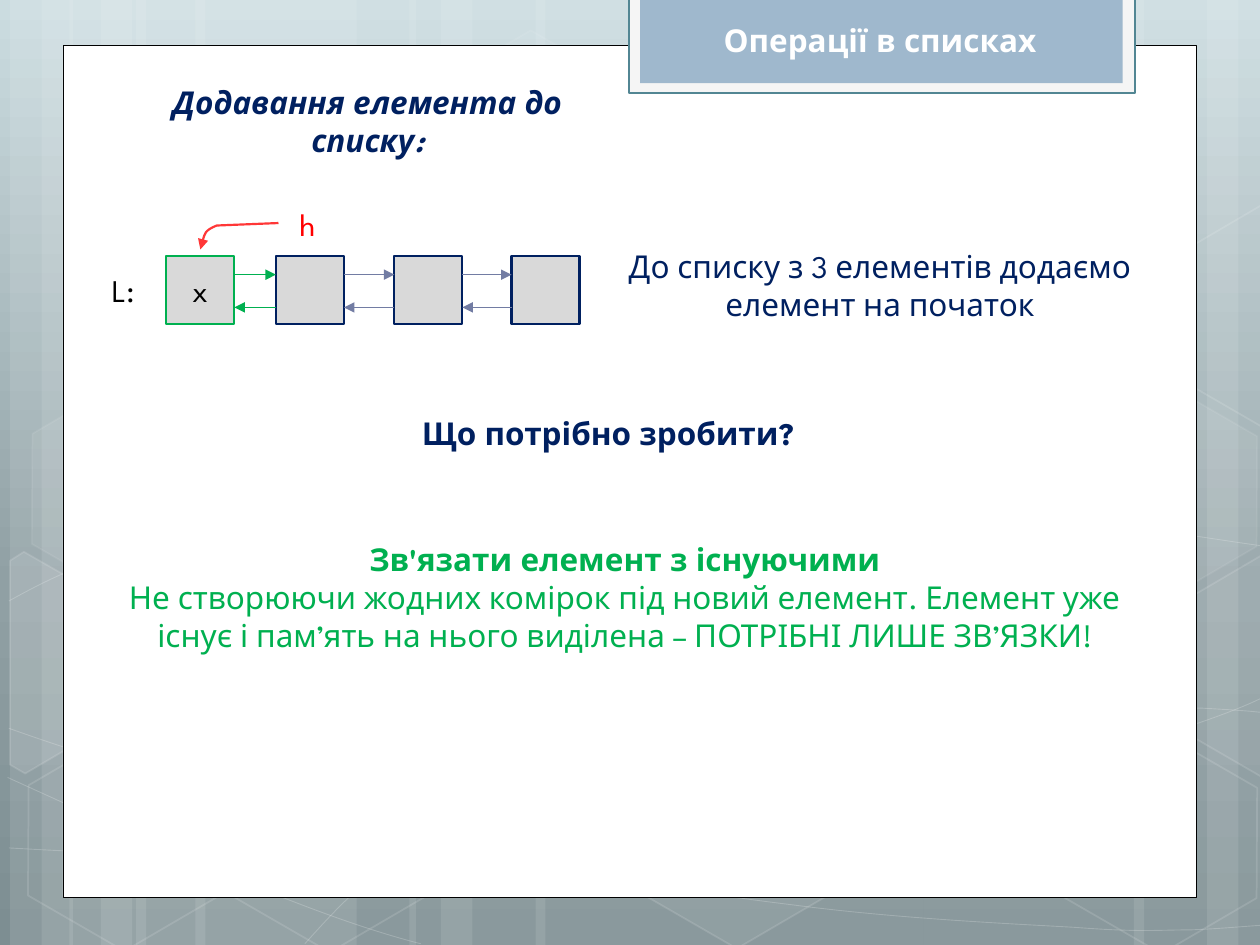
import copy
from lxml import etree
from pptx import Presentation, util as u
from pptx.dml.color import RGBColor
from pptx.enum import shapes, text
from pptx.oxml import parse_xml
from pptx.oxml.ns import nsdecls, qn

FONT = "League Spartan"
WHITE, BLACK = RGBColor(255, 255, 255), RGBColor(0, 0, 0)
NAVY, GREEN = RGBColor(0x00, 0x20, 0x60), RGBColor(0x00, 0xB0, 0x50)
RED, HEAD_RED = RGBColor(0xFF, 0, 0), RGBColor(0xFF, 0x37, 0x37)
GRAY, LINK = RGBColor(0xD9, 0xD9, 0xD9), RGBColor(0x72, 0x7C, 0xA3)
TAB_RIM, TAB_EDGE, TAB = (RGBColor(0xF5, 0xF5, 0xF5), RGBColor(0x52, 0x86, 0x93),
                          RGBColor(0x9F, 0xB8, 0xCD))
SKY = [(0, RGBColor(0xCB, 0xDC, 0xE0)), (0.62, RGBColor(0x90, 0xA0, 0xA4)),
       (1, RGBColor(0x7D, 0x8E, 0x92))]

# Backdrop: stripes are (left, width), hexagons (left, top, fill %, line %)
STRIPES = [(1.08, 1.75), (0.08, 0.5), (0.33, 0.83), (1.55, 1.75), (0.55, 0.5), (0.8, 0.83),
           (7.33, 1.75), (9.58, 0.5), (9, 0.83), (4.25, 3.08), (3.25, 0.5), (3.5, 0.83)]
HEXAGONS = [(3.34, 0.36, 4, 8), (4.97, 5.89, 6, 12), (0.11, 5.91, 0, 12),
            (0.14, 3.12, 7, 8), (1.74, 5.92, 0, 12), (7.53, 4.53, 10, 12),
            (8.34, 5.93, 0, 12), (8.34, 3.14, 7, 8)]
# Paths: a start point, then lines (x, y) or cubic curves (six numbers)
WAVES = [
    [(0.07, 6.73), (0.61, 6.76, 1.15, 6.79, 1.9, 6.78), (2.65, 6.77, 3.58, 6.75, 4.58, 6.65),
     (5.58, 6.55, 7, 6.36, 7.92, 6.17), (8.83, 5.98, 9.77, 5.68, 10.07, 5.51)],
    [(0.07, 4.77), (0.36, 4.61, 0.65, 4.46, 1.21, 4.31), (1.78, 4.16, 2.59, 3.94, 3.47, 3.87),
     (4.36, 3.8, 5.44, 3.79, 6.54, 3.87), (7.64, 3.95, 9.47, 4.26, 10.07, 4.34)],
    [(0.06, 6.17), (1.27, 6.72, 2.47, 7.27, 3.34, 7.49)],
    [(0.07, 5.78), (0.38, 5.89, 0.7, 6, 1.28, 6.16), (1.86, 6.31, 2.73, 6.56, 3.57, 6.73),
     (4.4, 6.9, 5.45, 7.08, 6.28, 7.18), (7.11, 7.29, 8, 7.33, 8.53, 7.36),
     (9.05, 7.4, 9.19, 7.38, 9.45, 7.38), (9.71, 7.37, 9.89, 7.35, 10.07, 7.34)],
    [(2.42, 7.49), (2.6, 7.29, 2.78, 7.09, 3.02, 6.91), (3.26, 6.73, 3.6, 6.53, 3.88, 6.39),
     (4.16, 6.25, 4.33, 6.19, 4.7, 6.09), (5.06, 5.99, 5.73, 5.85, 6.08, 5.78),
     (6.44, 5.71, 6.49, 5.71, 6.8, 5.69), (7.11, 5.66, 7.6, 5.63, 7.94, 5.62),
     (8.29, 5.61, 8.86, 5.62, 8.86, 5.62), (9.53, 5.62),
     (9.71, 5.63, 9.88, 5.64, 9.97, 5.65), (10.06, 5.66, 10.03, 5.65, 10.06, 5.66)],
]
CUT_HEXAGONS = [
    ([(0.08, 4.45), (0.19, 4.38), (0.96, 4.82), (0.95, 5.7), (0.2, 6.14), (0.08, 6.07)], 10),
    ([(9.26, 4.85), (10.01, 4.41), (10.09, 4.46), (10.09, 6.13), (10.02, 6.17),
      (9.26, 5.73)], 4),
    ([(9.26, 2.07), (10.01, 1.63), (10.1, 1.68), (10.09, 3.35), (10.02, 3.39),
      (9.26, 2.95)], 0),
]

# List diagram: cells are (left, edge colour, label)
CELLS = [(1.32, GREEN, "x"), (2.19, NAVY, ""), (3.13, NAVY, ""), (4.06, NAVY, "")]
CELL, CELL_TOP, NEXT_Y, PREV_Y = 0.54, 2.03, 2.18, 2.44
HEAD_POINTER = [(2.21, 1.77), (1.72, 1.79), (1.62, 1.83, 1.61, 1.9, 1.59, 1.98)]

# Texts: box, colour, wrap, alignment, [(paragraph, bold, italic)]
CENTER, LEFT = text.PP_ALIGN.CENTER, text.PP_ALIGN.LEFT
TEXTS = [
    ((5.64, 0.12, 2.69, 0.4), WHITE, False, CENTER, [("Операції в списках", True, False)]),
    ((0.79, 2.1, 0.39, 0.4), BLACK, False, LEFT, [("L:", False, False)]),
    ((1.19, 0.61, 3.45, 0.71), NAVY, True, CENTER,
     [("Додавання елемента до списку:", True, True)]),
    ((4.82, 1.91, 4.33, 0.71), NAVY, True, CENTER,
     [("До списку з 3 елементів додаємо елемент на початок", False, False)]),
    ((2.23, 1.58, 0.42, 0.4), RED, True, CENTER, [("h", False, False)]),
    ((2.66, 3.24, 4.33, 0.4), NAVY, True, CENTER, [("Що потрібно зробити?", True, False)]),
    ((0.67, 4.24, 8.58, 1.01), GREEN, True, CENTER,
     [("Зв'язати елемент з існуючими", True, False),
      ("Не створюючи жодних комірок під новий елемент. Елемент уже існує і пам’ять "
       "на нього виділена – ПОТРІБНІ ЛИШЕ ЗВ’ЯЗКИ!", False, False)]),
]

prs = Presentation()
prs.slide_width, prs.slide_height = u.Inches(10), u.Inches(7.5)
slide = prs.slides.add_slide(prs.slide_layouts[6])


def paint(fill, color, opacity=100):
    if color is None or not opacity:
        fill.background()
        return
    fill.solid()
    fill.fore_color.rgb = color


def fade(shape, tag, opacity):
    """Set the opacity of the shape's fill (p:spPr) or line (a:ln)."""
    color = shape.element.find(f".//{qn(tag)}/{qn('a:solidFill')}/{qn('a:srgbClr')}")
    if color is not None and opacity < 100:
        color.append(parse_xml(f'<a:alpha {nsdecls("a")} val="{opacity * 1000}"/>'))


def style(shape, fill=None, edge=None, width=1, fill_opacity=100, edge_opacity=100):
    shape.shadow.inherit = False
    paint(shape.fill, fill, fill_opacity)
    paint(shape.line.fill, edge)
    if edge is not None:
        shape.line.width = u.Pt(width)
    fade(shape, "p:spPr", fill_opacity)
    fade(shape, "a:ln", edge_opacity)
    return shape


def add_preset(kind, box, **look):
    return style(slide.shapes.add_shape(kind, *map(u.Inches, box)), **look)


def add_rect(box, **look):
    return add_preset(shapes.MSO_SHAPE.RECTANGLE, box, **look)


def add_path(path, closed=False, **look):
    """Build the outline through all points, then join each curve's three into a Bézier."""
    start, *rest = [(u.Inches(x), u.Inches(y))
                    for step in path for x, y in zip(step[::2], step[1::2])]
    builder = slide.shapes.build_freeform(*start)
    builder.add_line_segments(rest, close=closed)
    shape = builder.convert_to_shape()
    lines = iter(list(shape.element.iter(qn("a:lnTo"))))
    for step in path[1:]:
        first = next(lines)
        if len(step) == 6:
            curve = etree.Element(qn("a:cubicBezTo"))
            first.addprevious(curve)
            for line in (first, next(lines), next(lines)):
                curve.append(line[0])
                line.getparent().remove(line)
    return style(shape, **look)


def add_arrowhead(shape):
    shape.element.find(f".//{qn('a:ln')}").append(
        parse_xml(f'<a:tailEnd {nsdecls("a")} type="triangle"/>'))


def add_link(x1, x2, y, color):
    link = slide.shapes.add_connector(shapes.MSO_CONNECTOR.STRAIGHT,
                                      *map(u.Inches, (x1, y, x2, y)))
    link.line.color.rgb, link.line.width = color, u.Pt(0.75)
    add_arrowhead(link)
    link.element.spPr.append(parse_xml(f'<a:effectLst {nsdecls("a")}/>'))


def write(paragraph, words, color, align=CENTER, bold=False, italic=False):
    paragraph.text, paragraph.alignment = words, align
    font = paragraph.font
    font.name, font.size, font.bold, font.italic = FONT, u.Pt(18), bold, italic
    font.color.rgb = color


# Background gradient, top to bottom
sky = slide.background.fill
sky.gradient()
sky.gradient_angle = 270
stops = slide.element.find(f".//{qn('a:gsLst')}")
stops.append(copy.deepcopy(stops[-1]))
for stop, (position, color) in zip(sky.gradient_stops, SKY):
    stop.position, stop.color.rgb = position, color

# Stripes, waves and hexagons
for left, width in STRIPES:
    add_rect((left, 0, width, 7.5), fill=WHITE, fill_opacity=10)
for wave in WAVES:
    add_path(wave, edge=WHITE, width=0.5, edge_opacity=20)
for left, top, fill_opacity, edge_opacity in HEXAGONS:
    hexagon = add_preset(shapes.MSO_SHAPE.HEXAGON, (left, top, 1.75, 1.52), fill=WHITE,
                         edge=WHITE, fill_opacity=fill_opacity, edge_opacity=edge_opacity)
    hexagon.adjustments[0] = 0.285
    hexagon.rotation = 30
for outline, opacity in CUT_HEXAGONS:
    add_path(outline, closed=True, fill=WHITE, edge=WHITE, fill_opacity=opacity, edge_opacity=12)

# Page and title tab
add_rect((0.5, 0.36, 9, 6.76), fill=WHITE, edge=BLACK, width=0.5)
add_rect((4.99, -0.02, 4.02, 0.76), fill=TAB_RIM, edge=TAB_EDGE, width=1.25)
add_rect((5.08, -0.02, 3.83, 0.68), fill=TAB)

# Cells, links both ways, head pointer
for left, edge, label in CELLS:
    cell = add_rect((left, CELL_TOP, CELL, CELL), fill=GRAY, edge=edge, width=1.25)
    if label:
        cell.text_frame.vertical_anchor = text.MSO_ANCHOR.MIDDLE
        write(cell.text_frame.paragraphs[0], label, BLACK)
for (left, edge, _), (following, _, _) in zip(CELLS, CELLS[1:]):
    color = GREEN if edge == GREEN else LINK
    add_link(left + CELL, following, NEXT_Y, color)
    add_link(following, left + CELL, PREV_Y, color)
add_arrowhead(add_path(HEAD_POINTER, edge=HEAD_RED, width=1.25))

# Texts
for box, color, wrap, align, paragraphs in TEXTS:
    frame = slide.shapes.add_textbox(*map(u.Inches, box)).text_frame
    frame.word_wrap = wrap
    frame.auto_size = text.MSO_AUTO_SIZE.SHAPE_TO_FIT_TEXT
    for i, (words, bold, italic) in enumerate(paragraphs):
        paragraph = frame.add_paragraph() if i else frame.paragraphs[0]
        write(paragraph, words, color, align, bold, italic)

prs.save("out.pptx")
